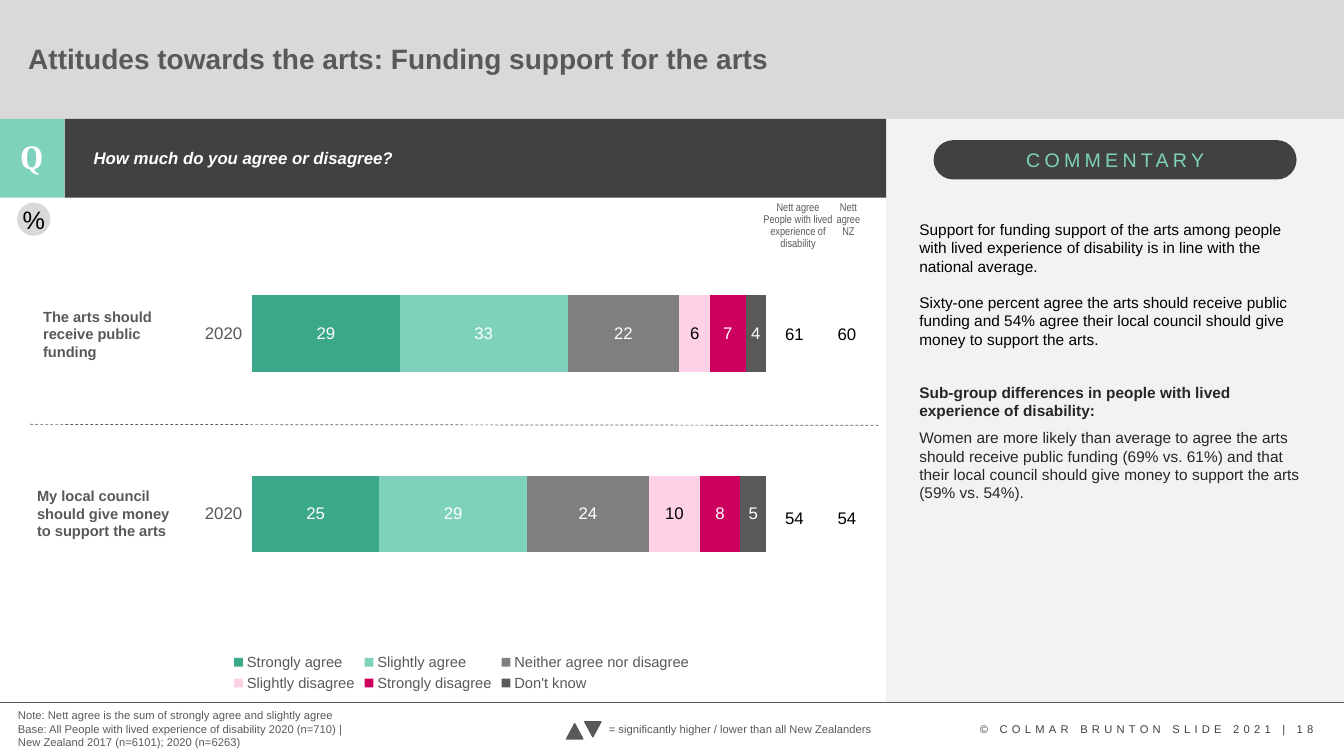
from collections import namedtuple
from dataclasses import dataclass

from lxml import etree
from pptx import Presentation
from pptx import util as u
from pptx.chart.data import CategoryChartData
from pptx.dml.color import RGBColor
from pptx.enum import chart as ch, dml, shapes, text
from pptx.oxml import parse_xml
from pptx.oxml.ns import qn

Box = namedtuple("Box", "x y w h")


@dataclass(frozen=True)
class Theme:
    font: str = "Arial"
    narrow: str = "Arial Narrow"
    serif: str = "Cambria"
    white: str = "FFFFFF"
    black: str = "000000"
    ink: str = "262626"
    dark: str = "414141"
    copyright: str = "404040"
    grey: str = "595959"
    mid: str = "7F7F7F"
    band: str = "D9D9D9"
    panel: str = "F2F2F2"
    green: str = "3AA889"
    mint: str = "7ED2BB"
    pink: str = "FFD1E6"
    magenta: str = "CD005F"
    title: float = 20
    letter: float = 24
    badge: float = 18
    heading: float = 14
    value: float = 12
    body: float = 11
    label: float = 10.5
    note: float = 8


T = Theme()
SERIES = [
    ("Strongly agree", (25, 29), T.green, T.white),
    ("Slightly agree", (29, 33), T.mint, T.white),
    ("Neither agree nor disagree", (24, 22), T.mid, T.white),
    ("Slightly disagree", (10, 6), T.pink, T.black),
    ("Strongly disagree", (8, 7), T.magenta, T.white),
    ("Don't know", (5, 4), T.grey, T.white),
]
NETT = [("61", "60"), ("54", "54")]
COMMENTARY = [
    ("Support for funding support of the arts among people with lived experience of "
     "disability is in line with the national average.", T.black, False, 0),
    ("Sixty-one percent agree the arts should receive public funding and 54% agree their "
     "local council should give money to support the arts.", T.black, False, 12.6),
    ("Sub-group differences in people with lived experience of disability:", T.ink, True, 24.6),
    ("Women are more likely than average to agree the arts should receive public funding "
     "(69% vs. 61%) and that their local council should give money to support the arts "
     "(59% vs. 54%).", T.ink, False, 6),
]


def rgb(color):
    return RGBColor.from_string(color)


def inches(*lengths):
    return [u.Inches(n) for n in lengths]


def style(font, size, color, bold=False, italic=False, name=T.font):
    font.name, font.size, font.bold, font.italic = name, u.Pt(size), bold, italic
    font.color.rgb = rgb(color)


def add_run(p, words, size, color, spacing=0, **look):
    r = p.add_run()
    r.text = words
    style(r.font, size, color, **look)
    if spacing:
        r._r.get_or_add_rPr().set("spc", str(spacing * 100))


def add_text(parent, box, lines, size, color, align=text.PP_ALIGN.LEFT, leading=1.0,
             wrap=True, **look):
    tf = parent.add_textbox(*inches(*box)).text_frame
    tf.word_wrap = wrap
    for i, line in enumerate(lines):
        p = tf.paragraphs[0] if i == 0 else tf.add_paragraph()
        p.alignment, p.line_spacing = align, leading
        add_run(p, line, size, color, **look)
    return tf


def add_block(parent, kind, box, fill):
    sp = parent.add_shape(kind, *inches(*box))
    sp.shadow.inherit = False
    sp.fill.solid()
    sp.fill.fore_color.rgb = rgb(fill)
    sp.line.fill.background()
    return sp


def add_rule(s, x1, y1, x2, y2):
    line = s.shapes.add_connector(shapes.MSO_CONNECTOR.STRAIGHT, *inches(x1, y1, x2, y2))
    line.line.color.rgb = rgb(T.grey)
    line.line.width = u.Pt(0.5)
    etree.SubElement(line._element.spPr, qn("a:effectLst"))
    return line


def add_header(s, box):
    add_block(s.shapes, shapes.MSO_SHAPE.RECTANGLE, box, T.band)
    title = s.shapes.title
    s.shapes._spTree.append(title._element)
    title.left, title.top, title.width, title.height = inches(box.x + 0.18, box.y + 0.23, 11.19, 0.78)
    tf = title.text_frame
    tf.vertical_anchor = text.MSO_ANCHOR.MIDDLE
    p = tf.paragraphs[0]
    p.alignment, p.line_spacing = text.PP_ALIGN.LEFT, 0.9
    add_run(p, "Attitudes towards the arts: Funding support for the arts", T.title, T.grey, bold=True)


def add_question(s, box):
    rect, tab = shapes.MSO_SHAPE.RECTANGLE, 0.64
    add_block(s.shapes, rect, (box.x + tab, box.y, box.w - tab, box.h), T.dark)
    add_block(s.shapes, rect, (box.x, box.y, tab, box.h), T.mint)
    add_text(s.shapes, (box.x + 0.08, box.y + 0.12, 0.47, 0.5), ["Q"], T.letter, T.white,
             text.PP_ALIGN.CENTER, bold=True, name=T.serif)
    add_text(s.shapes, (box.x + 0.83, box.y + 0.26, 7.6, 0.33),
             ["How much do you agree or disagree?"], T.value, T.white, leading=0.9,
             bold=True, italic=True)


def add_commentary(s, box):
    add_block(s.shapes, shapes.MSO_SHAPE.RECTANGLE, box, T.panel)
    pill = add_block(s.shapes, shapes.MSO_SHAPE.ROUNDED_RECTANGLE,
                     (box.x + 0.47, box.y + 0.21, 3.6, 0.39), T.dark)
    pill.adjustments[0] = 0.5
    add_text(s.shapes, (box.x + 1.29, box.y + 0.24, 2.02, 0.34), ["COMMENTARY"], T.heading,
             T.mint, wrap=False, spacing=3)
    tf = s.shapes.add_textbox(*inches(box.x + 0.23, box.y + 0.95, 4.04, 2.95)).text_frame
    tf.word_wrap = True
    for i, (words, color, bold, before) in enumerate(COMMENTARY):
        p = tf.paragraphs[0] if i == 0 else tf.add_paragraph()
        if before:
            p.space_before = u.Pt(before)
        add_run(p, words, T.body, color, bold=bold)


def add_bars(s, box):
    data = CategoryChartData()
    data.categories = ["2020", "2020"]
    for name, values, _, _ in SERIES:
        data.add_series(name, values)
    chart = s.shapes.add_chart(ch.XL_CHART_TYPE.BAR_STACKED_100, *inches(*box), data).chart
    style(chart.font, 10, T.black)
    chart.has_title = False
    chart.has_legend = True
    chart.legend.position = ch.XL_LEGEND_POSITION.BOTTOM
    chart.legend.include_in_layout = False
    style(chart.legend.font, T.label, T.grey)
    chart.value_axis.visible = False
    chart.value_axis.has_major_gridlines = False
    chart.category_axis.format.line.fill.background()
    style(chart.category_axis.tick_labels.font, T.value, T.grey)
    plot = chart.plots[0]
    plot.gap_width, plot.overlap, plot.vary_by_categories = 136, 100, False
    for series, (_, _, fill, ink) in zip(plot.series, SERIES):
        series.format.fill.solid()
        series.format.fill.fore_color.rgb = rgb(fill)
        labels = series.data_labels
        labels.show_value = True
        style(labels.font, T.value, ink)
    area = chart._chartSpace.chart.plotArea
    for old in area.findall(qn("c:layout")):
        area.remove(old)
    places = (("x", 0.168), ("y", 0.073), ("w", 0.814), ("h", 0.74))
    area.insert(0, parse_xml(
        '<c:layout xmlns:c="http://schemas.openxmlformats.org/drawingml/2006/chart">'
        '<c:manualLayout><c:layoutTarget val="inner"/><c:xMode val="edge"/><c:yMode val="edge"/>'
        + "".join(f'<c:{k} val="{v}"/>' for k, v in places) + "</c:manualLayout></c:layout>"))


def add_nett_table(s, box):
    table = s.shapes.add_table(2, 2, *inches(*box)).table
    table.first_row = table.horz_banding = False
    table._tbl.tblPr.find(qn("a:tableStyleId")).text = "{2D5ABB26-0587-4C30-8999-92F81FD0307C}"
    for r, row in enumerate(NETT):
        for c, value in enumerate(row):
            cell = table.cell(r, c)
            cell.fill.background()
            cell.vertical_anchor = text.MSO_ANCHOR.MIDDLE
            p = cell.text_frame.paragraphs[0]
            p.alignment = text.PP_ALIGN.CENTER
            add_run(p, value, T.value, T.black)


def add_results(s, box):
    add_bars(s, Box(box.x + 1.45, box.y + 0.1, 6.26, 4.84))
    divider = add_rule(s, box.x + 0.3, box.y + 2.25, box.x + 8.72, box.y + 2.26)
    divider.line.dash_style = dml.MSO_LINE.DASH
    add_nett_table(s, Box(box.x + 7.62, box.y + 0.44, 1.04, 3.66))
    for x, y, w, words in ((0.33, 1.04, 1.5, "The arts should receive public funding"),
                           (0.27, 2.82, 1.64, "My local council should give money to support the arts")):
        add_text(s.shapes, (box.x + x, box.y + y, w, 0.63), [words], T.label, T.grey, bold=True)
    badge = add_block(s.shapes, shapes.MSO_SHAPE.OVAL, (box.x + 0.17, box.y + 0.05, 0.33, 0.33), T.band)
    tf = badge.text_frame
    tf.margin_left = tf.margin_right = tf.margin_top = tf.margin_bottom = 0
    tf.word_wrap = False
    tf.vertical_anchor = text.MSO_ANCHOR.MIDDLE
    tf.paragraphs[0].alignment = text.PP_ALIGN.CENTER
    add_run(tf.paragraphs[0], "%", T.badge, T.black)
    for x, w, lines in ((7.47, 0.89, ["Nett agree People with lived experience of disability"]),
                        (8.07, 0.69, ["Nett", "agree", "NZ"])):
        add_text(s.shapes, (box.x + x, box.y - 0.01, w, 0.59), lines, T.note, T.grey,
                 text.PP_ALIGN.CENTER, 0.9, name=T.narrow)


def add_footer(s, box):
    add_rule(s, box.x, box.y, box.x + box.w, box.y)
    add_text(s.shapes, (box.x + 0.08, box.y + 0.01, 3.6, 0.5),
             ["Note: Nett agree is the sum of strongly agree and slightly agree",
              "Base: All People with lived experience of disability 2020 (n=710) | "
              "New Zealand 2017 (n=6101); 2020 (n=6263)"], T.note, T.grey)
    key = s.shapes.add_group_shape().shapes
    add_text(key, (box.x + 5.94, box.y + 0.15, 2.84, 0.24),
             ["= significantly higher / lower than all New Zealanders"], T.note, T.grey, wrap=False)
    for x, y, turn in ((5.62, 0.21, 0), (5.8, 0.19, 180)):
        arrow = add_block(key, shapes.MSO_SHAPE.ISOSCELES_TRIANGLE,
                          (box.x + x, box.y + y, 0.16, 0.15), T.grey)
        arrow.line.color.rgb = rgb(T.grey)
        arrow.line.width = u.Pt(1)
        arrow.rotation = turn
    add_text(s.shapes, (box.x + 9.62, box.y + 0.15, 3.61, 0.24),
             ["© COLMAR BRUNTON SLIDE 2021 | 18"], T.note, T.copyright, spacing=3)


def main():
    prs = Presentation()
    prs.slide_width, prs.slide_height = inches(13.33, 7.5)
    s = prs.slides.add_slide(prs.slide_layouts[5])
    add_header(s, Box(0, -0.02, 13.33, 1.2))
    add_commentary(s, Box(8.79, 1.18, 4.54, 5.79))
    add_question(s, Box(0, 1.18, 8.79, 0.78))
    add_results(s, Box(0, 1.96, 8.79, 5.01))
    add_footer(s, Box(0, 6.97, 13.33, 0.53))
    prs.save("out.pptx")


if __name__ == "__main__":
    main()
